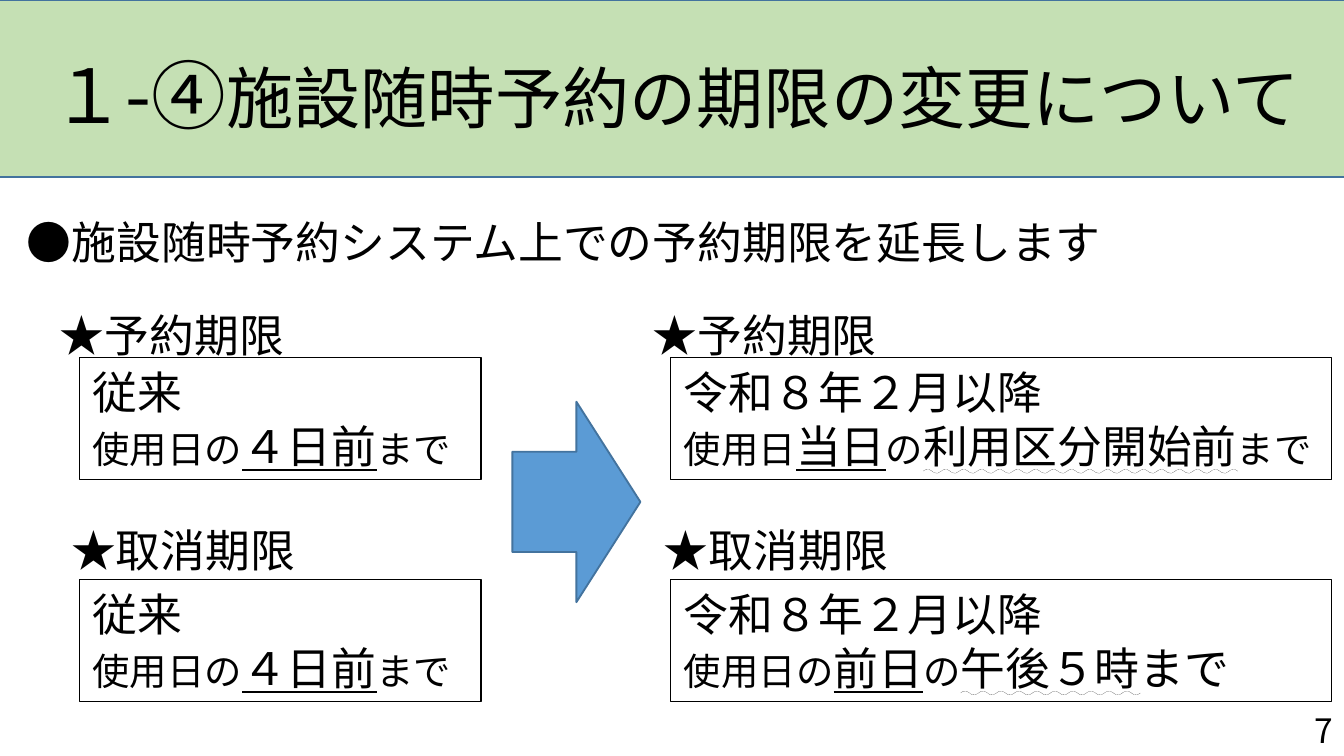
"""Build the slide on the changed deadlines for facility bookings."""
from lxml.etree import SubElement
from pptx import Presentation
from pptx.dml.color import RGBColor
from pptx.enum.shapes import MSO_SHAPE as SHAPE
from pptx.enum.text import MSO_ANCHOR as ANCHOR, MSO_AUTO_SIZE as AUTO_SIZE
from pptx.enum.text import MSO_UNDERLINE as UNDERLINE, PP_ALIGN as ALIGN
from pptx.oxml.ns import qn
from pptx.util import Pt

FONT = "Noto Sans CJK JP"
COLORS = {"band": "C5E0B4", "arrow": "5B9BD5", "edge": "43739E", "ink": "000000"}
SINGLE, WAVY = UNDERLINE.SINGLE_LINE, UNDERLINE.WAVY_LINE


def write(shape, lines, spacing, anchor=ANCHOR.TOP):
    frame = shape.text_frame
    frame.word_wrap = True
    frame.auto_size = AUTO_SIZE.NONE
    frame.vertical_anchor = anchor
    for index, runs in enumerate(lines):
        paragraph = frame.add_paragraph() if index else frame.paragraphs[0]
        paragraph.alignment = ALIGN.LEFT
        paragraph.line_spacing = Pt(spacing)
        paragraph.space_before = Pt(0)
        for text, size, underline in runs:
            run = paragraph.add_run()
            run.text = text
            run.font.size = Pt(size)
            run.font.name = FONT
            run.font.color.rgb = RGBColor.from_string(COLORS["ink"])
            if underline:
                run.font.underline = underline
            latin = run.font._element.find(qn("a:latin"))
            east_asian = SubElement(run.font._element, qn("a:ea"), typeface=FONT)
            latin.addnext(east_asian)


def add_figure(kind, left, top, width, height, fill, line, weight):
    shape = slide.shapes.add_shape(kind, Pt(left), Pt(top), Pt(width), Pt(height))
    shape.shadow.inherit = False
    if fill:
        shape.fill.solid()
        shape.fill.fore_color.rgb = RGBColor.from_string(COLORS[fill])
    else:
        shape.fill.background()
    shape.line.color.rgb = RGBColor.from_string(COLORS[line])
    shape.line.width = Pt(weight)
    return shape


presentation = Presentation()
presentation.slide_width, presentation.slide_height = Pt(720), Pt(405)
slide = presentation.slides.add_slide(presentation.slide_layouts[1])
title, body = slide.placeholders

band = add_figure(SHAPE.RECTANGLE, -8.6, 0, 737.2, 95, "band", "edge", 1)
title.element.addprevious(band.element)
title.left, title.top, title.width, title.height = Pt(20.2), Pt(22.5), Pt(709.2), Pt(55.4)
write(title, [[("１-④", 40, None), ("施設随時予約の期限の変更について", 36, None)]],
      48, ANCHOR.MIDDLE)

body.left, body.top, body.width, body.height = Pt(7.2), Pt(111), Pt(705.6), Pt(36)
properties = body.text_frame.paragraphs[0]._p.get_or_add_pPr()
properties.set("marL", "0")
properties.set("indent", "0")
SubElement(properties, qn("a:buNone"))
write(body, [[("●施設随時予約システム上での予約期限を延長します", 24, None)]], 29)

before = [[("従来", 24, None)],
          [("使用日の", 20, None), ("４日前", 24, SINGLE), ("まで", 20, None)]]
heading = [("令和８年２月以降", 24, None)]
booking = [heading,
           [("使用日", 20, None), ("当日", 24, SINGLE), ("の", 20, None),
            ("利用区分開始前", 24, WAVY), ("まで", 20, None)]]
cancelling = [heading,
              [("使用日の", 20, None), ("前日", 24, SINGLE), ("の", 20, None),
               ("午後５時", 24, WAVY), ("まで", 24, None)]]
columns = [(42.5, 215.3), (359.3, 354.2)]
rows = [("★予約期限", 25, 161.3, 191.5, (before, booking)),
        ("★取消期限", 31, 276.5, 310.3, (before, cancelling))]

for label, label_left, label_top, box_top, contents in rows:
    for column, ((left, width), lines) in enumerate(zip(columns, contents)):
        label_box = slide.shapes.add_textbox(
            Pt(label_left + 317.6 * column), Pt(label_top), Pt(150), Pt(36))
        write(label_box, [[(label, 24, None)]], 29)
        box = add_figure(SHAPE.RECTANGLE, left, box_top, width, 65.4, None, "ink", 0.75)
        write(box, lines, 29)

add_figure(SHAPE.RIGHT_ARROW, 274.5, 215.2, 68.6, 107.4, "arrow", "edge", 1)

page_number = slide.shapes.add_textbox(Pt(697), Pt(376.4), Pt(23), Pt(28.6))
write(page_number, [[("7", 18, None)]], 22)

presentation.save("out.pptx")
